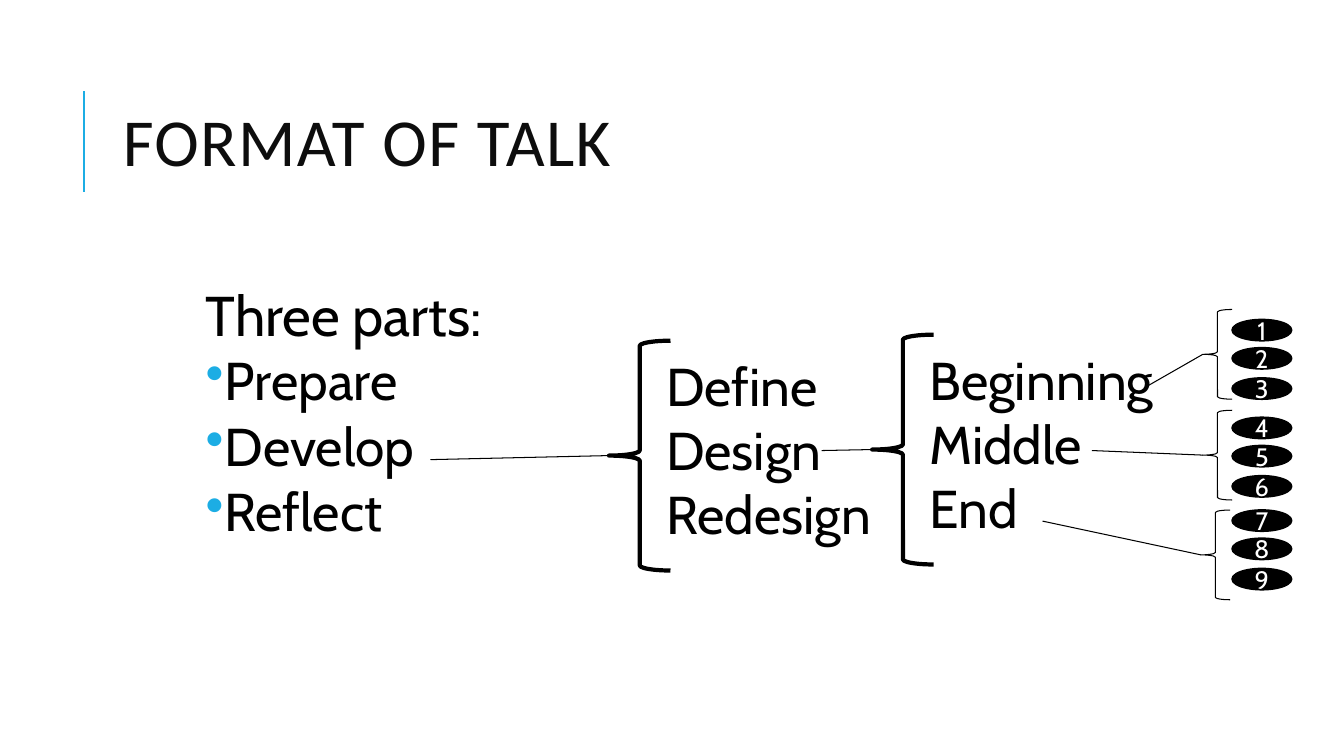
from lxml.etree import SubElement
from pptx import Presentation
from pptx.dml.color import RGBColor
from pptx.enum.shapes import MSO_CONNECTOR as Connector, MSO_SHAPE as Shape
from pptx.enum.text import MSO_ANCHOR as Anchor, MSO_AUTO_SIZE as AutoSize, PP_ALIGN as Align
from pptx.oxml.ns import qn
from pptx.util import Pt

EMU_PER_PX = 9144  # 100 px to the inch
COLORS = {"accent": "1CADE4", "title": "0D0D0D", "ink": "000000", "paper": "FFFFFF"}
HEADING_FONT, BODY_FONT = "Calibri", "Cabin"
LEFT_SITE = 1


def px(length):
    return length * EMU_PER_PX


def color(name):
    return RGBColor.from_string(COLORS[name])


def add_span(para, text, size, name="ink", font=BODY_FONT):
    span = para.add_run()
    span.text = text
    span.font.size = Pt(size)
    span.font.name = font
    span.font.color.rgb = color(name)
    return span


def add_box(page, left, top, width, height):
    box = page.shapes.add_textbox(px(left), px(top), px(width), px(height))
    box.text_frame.word_wrap = True
    return box.text_frame


def next_para(frame, first):
    return frame.paragraphs[0] if first else frame.add_paragraph()


def set_indent(para, margin, indent=0):
    props = para._p.get_or_add_pPr()
    props.set("marL", str(px(margin)))
    props.set("indent", str(px(indent)))
    return props


def add_bullet(para):
    props = set_indent(para, 29, -15)
    bullet_color = SubElement(props, qn("a:buClr"))
    SubElement(bullet_color, qn("a:srgbClr")).set("val", COLORS["accent"])
    SubElement(props, qn("a:buChar")).set("char", "•")


def add_title(page, text):
    frame = add_box(page, 112, 64, 1063, 164)
    frame.vertical_anchor = Anchor.MIDDLE
    para = frame.paragraphs[0]
    para.line_spacing = 0.8
    span = add_span(para, text, 48, "title", HEADING_FONT)
    span.font._element.set("spc", "100")


def add_parts(page, heading, parts):
    frame = add_box(page, 185, 281, 892, 356)
    frame.margin_left = frame.margin_right = px(5)
    frame.margin_top = frame.margin_bottom = px(5)
    para = frame.paragraphs[0]
    set_indent(para, 14)
    para.line_spacing, para.space_after = 0.9, Pt(2)
    add_span(para, heading, 40)
    for part in parts:
        para = frame.add_paragraph()
        add_bullet(para)
        para.line_spacing = 0.9
        para.space_before, para.space_after = Pt(2), Pt(4)
        add_span(para, part, 38)


def add_steps(page, left, top, steps):
    frame = add_box(page, left, top, 344, 202)
    frame.auto_size = AutoSize.SHAPE_TO_FIT_TEXT
    for index, step in enumerate(steps):
        para = next_para(frame, index == 0)
        set_indent(para, 50)
        add_span(para, step, 38)


def add_brace(page, left, top, width, height, weight):
    brace = page.shapes.add_shape(Shape.LEFT_BRACE, px(left), px(top), px(width), px(height))
    brace.shadow.inherit = False
    brace.fill.background()
    brace.line.color.rgb = color("ink")
    brace.line.width = Pt(weight)
    return brace


def add_number(page, top, number):
    oval = page.shapes.add_shape(Shape.OVAL, px(1222), px(top), px(59), px(21))
    oval.shadow.inherit = False
    oval.fill.solid()
    oval.fill.fore_color.rgb = color("ink")
    oval.line.color.rgb = color("ink")
    oval.line.width = Pt(1.25)
    oval.text_frame.vertical_anchor = Anchor.MIDDLE
    para = oval.text_frame.paragraphs[0]
    para.alignment = Align.CENTER
    add_span(para, str(number), 18, "paper")


def add_line(page, start, end, name="ink", weight=0.75):
    line = page.shapes.add_connector(Connector.STRAIGHT, *map(px, start + end))
    line.line.color.rgb = color(name)
    line.line.width = Pt(weight)
    SubElement(line._element.spPr, qn("a:effectLst"))
    return line


def link_brace(page, brace, end):
    line = add_line(page, (0, 0), end)
    line.begin_connect(brace, LEFT_SITE)


def main():
    deck = Presentation()
    deck.slide_width, deck.slide_height = px(1333), px(750)
    page = deck.slides.add_slide(deck.slide_layouts[6])

    # Title with its accent rule
    add_line(page, (83, 190), (83, 90), "accent", 1.5)
    add_title(page, "FORMAT OF TALK")

    # Three parts of the talk
    add_parts(page, "Three parts:", ["Prepare", "Develop", "Reflect"])

    # Steps, each list opened by a brace that links back
    columns = [
        (601, 346, ["Define", "Design", "Redesign"], (427, 456)),
        (862, 340, ["Beginning", "Middle", "End"], (815, 447)),
    ]
    for left, top, steps, source in columns:
        add_steps(page, left, top, steps)
        brace = add_brace(page, left + 3, top - 8, 61, 228, 3)
        link_brace(page, brace, source)

    # Numbered points, three to a brace
    groups = [
        (1193, 307, 317, (1138, 383)),
        (1193, 407, 414, (1083, 447)),
        (1191, 506, 506, (1034, 517)),
    ]
    for group, (left, top, first_top, source) in enumerate(groups):
        brace = add_brace(page, left, top, 29, 89, 0.75)
        link_brace(page, brace, source)
        for index, offset in enumerate((0, 28, 58)):
            add_number(page, first_top + offset, 3 * group + index + 1)

    deck.save("out.pptx")


if __name__ == "__main__":
    main()
